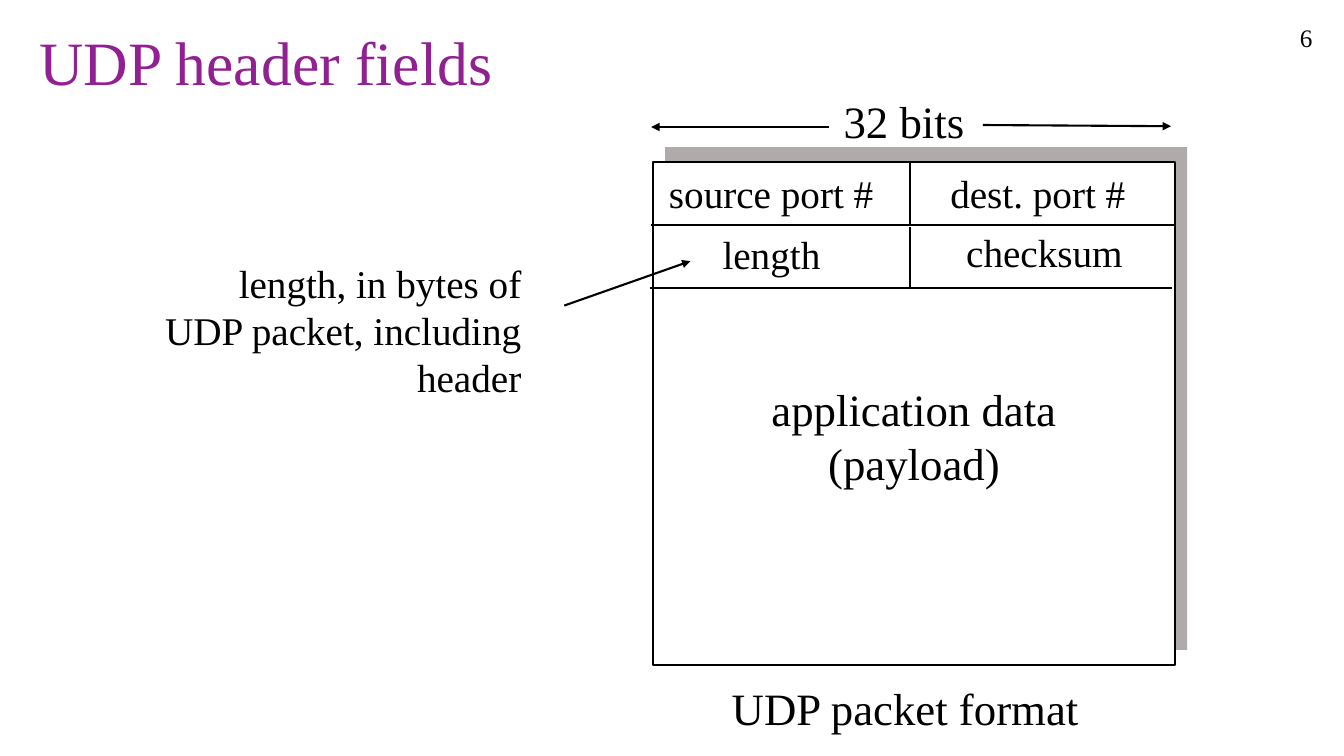
from dataclasses import dataclass

from lxml import etree
from pptx import Presentation
from pptx.dml.color import RGBColor
from pptx.enum.shapes import MSO_CONNECTOR, MSO_SHAPE
from pptx.enum.text import MSO_ANCHOR, MSO_AUTO_SIZE, PP_ALIGN
from pptx.oxml.ns import qn
from pptx.util import Cm, Pt

RECTANGLE = MSO_SHAPE.RECTANGLE
STRAIGHT = MSO_CONNECTOR.STRAIGHT
LEFT, CENTER, RIGHT = PP_ALIGN.LEFT, PP_ALIGN.CENTER, PP_ALIGN.RIGHT
TOP, MIDDLE = MSO_ANCHOR.TOP, MSO_ANCHOR.MIDDLE
FIXED_SIZE = MSO_AUTO_SIZE.NONE
TITLE_ONLY = 5


@dataclass(frozen=True)
class Theme:
    """Colours, font and type sizes of the slide."""

    font: str = "Times New Roman"
    ink: RGBColor = RGBColor(0x00, 0x00, 0x00)
    paper: RGBColor = RGBColor(0xFF, 0xFF, 0xFF)
    accent: RGBColor = RGBColor(0x93, 0x20, 0x92)
    shade: RGBColor = RGBColor(0xAF, 0xAB, 0xAB)
    title: int = 44
    label: int = 32
    field: int = 28
    number: int = 18
    stroke: float = 1.5


class SlideBuilder:
    """Draws themed elements on one slide, with positions in centimetres."""

    def __init__(self, slide, theme):
        self.slide = slide
        self.theme = theme

    def set_lines(self, frame, lines, size, color, align, anchor=TOP):
        """Fill a text frame with one paragraph per line."""
        frame.word_wrap = True
        frame.auto_size = FIXED_SIZE
        frame.vertical_anchor = anchor
        for index, line in enumerate(lines):
            paragraph = frame.add_paragraph() if index else frame.paragraphs[0]
            paragraph.alignment = align
            run = paragraph.add_run()
            run.text = line
            run.font.name = self.theme.font
            run.font.size = Pt(size)
            run.font.color.rgb = color

    def title(self, wording, left, top, width, height):
        """Place and format the title placeholder."""
        heading = self.slide.shapes.title
        heading.left, heading.top = Cm(left), Cm(top)
        heading.width, heading.height = Cm(width), Cm(height)
        self.set_lines(heading.text_frame, [wording], self.theme.title,
                       self.theme.accent, LEFT, MIDDLE)
        heading.text_frame.paragraphs[0].line_spacing = 0.9

    def text(self, lines, left, top, width, height, size, align=LEFT):
        """Add a text box."""
        box = self.slide.shapes.add_textbox(Cm(left), Cm(top), Cm(width), Cm(height))
        self.set_lines(box.text_frame, lines, size, self.theme.ink, align)

    def panel(self, left, top, width, height, fill, outlined=False):
        """Add a filled rectangle."""
        panel = self.slide.shapes.add_shape(
            RECTANGLE, Cm(left), Cm(top), Cm(width), Cm(height))
        panel.shadow.inherit = False
        panel.fill.solid()
        panel.fill.fore_color.rgb = fill
        if outlined:
            self.stroke(panel.line)
        else:
            panel.line.fill.background()

    def stroke(self, line):
        """Apply the theme outline."""
        line.color.rgb = self.theme.ink
        line.width = Pt(self.theme.stroke)

    def line(self, x1, y1, x2, y2, arrow=False):
        """Add a straight line, with an arrowhead at its end if asked."""
        rule = self.slide.shapes.add_connector(STRAIGHT, Cm(x1), Cm(y1), Cm(x2), Cm(y2))
        self.stroke(rule.line)
        properties = rule._element.spPr
        if arrow:
            etree.SubElement(properties.find(qn("a:ln")), qn("a:tailEnd"), type="triangle")
        etree.SubElement(properties, qn("a:effectLst"))


def main():
    """Build the slide and save it."""
    theme = Theme()
    deck = Presentation()
    deck.slide_width, deck.slide_height = Cm(33.87), Cm(19.05)
    udp = SlideBuilder(deck.slides.add_slide(deck.slide_layouts[TITLE_ONLY]), theme)

    udp.title("UDP header fields", 0.74, 0.43, 32.33, 2.46)
    udp.text(["6"], 31.65, 0.43, 1.68, 1.02, theme.number, RIGHT)

    packet_width, packet_height = 13.16, 12.67
    udp.panel(16.76, 3.71, packet_width, packet_height, theme.shade)
    udp.panel(16.46, 4.09, packet_width, packet_height, theme.paper, outlined=True)

    udp.line(16.41, 5.66, 29.59, 5.66)
    udp.line(16.38, 7.26, 29.54, 7.26)
    for row_top, row_bottom in ((4.09, 5.64), (5.72, 7.26)):
        udp.line(22.94, row_bottom, 22.94, row_top)

    header_fields = (
        ("source port #", 16.61, 4.14, 6.12),
        ("dest. port #", 23.7, 4.14, 5.13),
        ("length", 17.96, 5.69, 3.02),
        ("checksum", 24.1, 5.64, 4.52),
    )
    for name, left, top, width in header_fields:
        udp.text([name], left, top, width, 1.52, theme.field)

    udp.text(["32 bits"], 21.01, 2.24, 3.61, 1.7, theme.label)
    udp.line(24.77, 3.15, 29.51, 3.18, arrow=True)
    udp.line(20.88, 3.2, 16.41, 3.2, arrow=True)

    udp.text(["application data", "(payload)"], 19.15, 9.5, 7.77, 3, theme.label, CENTER)
    udp.text(["UDP packet format"], 18.19, 17.04, 9.7, 1.7, theme.label)

    udp.text(["length, in bytes of UDP packet, including header"],
             3.86, 6.4, 9.53, 4.01, theme.field, RIGHT)
    udp.line(14.22, 7.7, 17.4, 6.58, arrow=True)

    deck.save("out.pptx")


if __name__ == "__main__":
    main()
